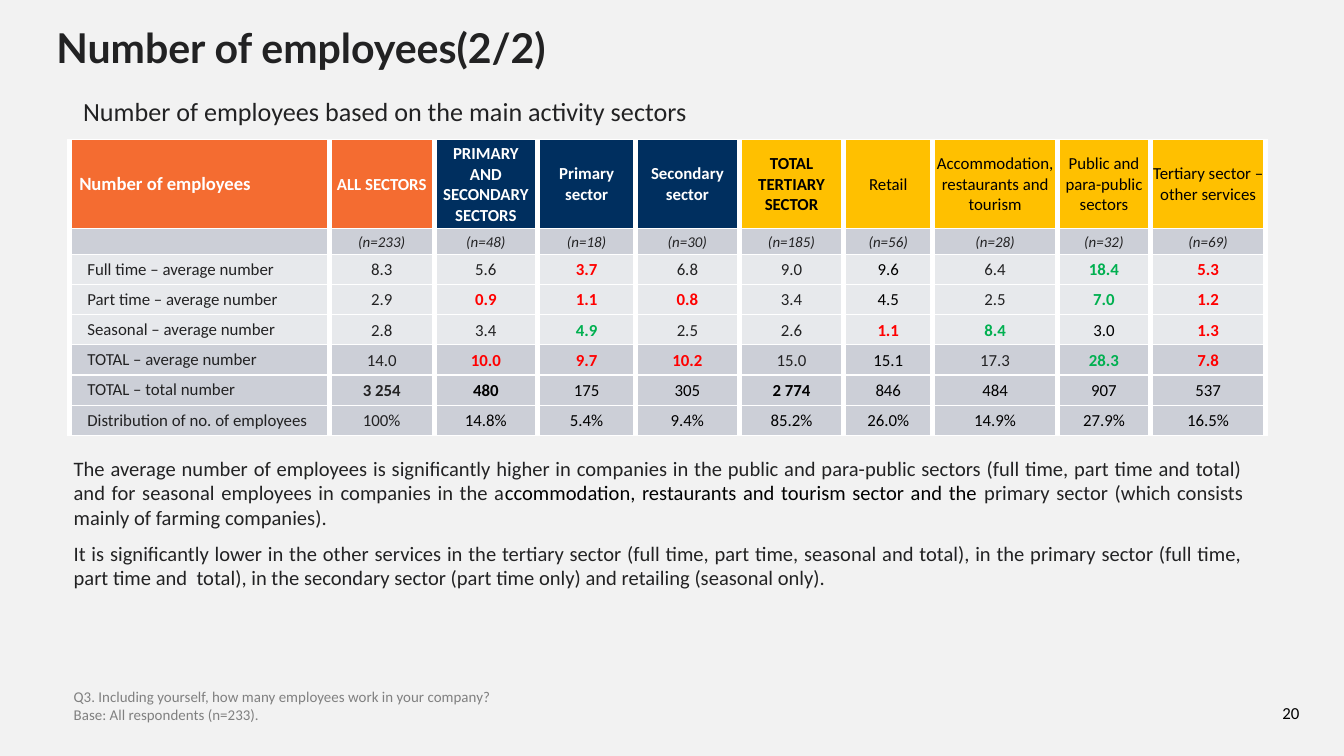
import pptx
import pptx.util
import pptx.dml.color
import pptx.enum.text
import pptx.oxml
import pptx.oxml.ns
import lxml.etree

In, Pt = pptx.util.Inches, pptx.util.Pt
Al = pptx.enum.text.PP_ALIGN
Mid = pptx.enum.text.MSO_ANCHOR
Fit = pptx.enum.text.MSO_AUTO_SIZE

theme = {
    "back": "F2F2F2", "ink": "222223", "black": "000000", "white": "FFFFFF",
    "gray": "808080", "low": "FF0000", "high": "00B050",
    "all": "F46C31", "navy": "002F5F", "gold": "FFC000",
    "dark": "CCCFD7", "light": "E7E9EC",
    "font": "Calibri", "head": "Lato",
    "title": 22, "sub": 14, "body": 11, "label": 10, "cell": 9, "note": 8,
}

title = "Number of employees(2/2)"
sub = "Number of employees based on the main activity sectors"
body = [
    [("The average number of employees is significantly higher in companies in the public and "
      "para-public sectors (full time, part time and total) and for seasonal employees in "
      "companies in the a", "ink"),
     ("ccommodation, restaurants and tourism sector and the ", "black"),
     ("primary sector (which consists mainly of farming companies).", "ink")],
    [("It is significantly lower in the other services in the tertiary sector (full time, part "
      "time, seasonal and total), in the primary sector (full time, part time and  total), in "
      "the secondary sector (part time only) and retailing (seasonal only).", "ink")],
]
notes = ["Q3. Including yourself, how many employees work in your company?",
         "Base: All respondents (n=233)."]
page = "20"

# Column: heading, fill, text colour, bold, width
cols = [
    ("Number of employees", "all", "white", True, 1.93),
    ("ALL SECTORS", "all", "white", True, 0.78),
    ("PRIMARY AND SECONDARY\nSECTORS", "navy", "white", True, 0.77),
    ("Primary sector", "navy", "white", True, 0.73),
    ("Secondary sector", "navy", "white", True, 0.77),
    ("TOTAL TERTIARY SECTOR", "gold", "black", True, 0.78),
    ("Retail", "gold", "black", False, 0.66),
    ("Accommodation, restaurants and tourism", "gold", "black", False, 0.93),
    ("Public and para-public sectors", "gold", "black", False, 0.69),
    ("Tertiary sector – other services", "gold", "black", False, 0.86),
]
bases = [233, 48, 18, 30, 185, 56, 28, 32, 69]
rows = [
    ("Full time – average number", "light", "8.3 5.6 -3.7 6.8 9.0 9.6 6.4 +18.4 -5.3"),
    ("Part time – average number", "light", "2.9 -0.9 -1.1 -0.8 3.4 4.5 2.5 +7.0 -1.2"),
    ("Seasonal – average number", "light", "2.8 3.4 +4.9 2.5 2.6 -1.1 +8.4 3.0 -1.3"),
    ("TOTAL – average number", "dark", "14.0 -10.0 -9.7 -10.2 15.0 15.1 17.3 +28.3 -7.8"),
    ("TOTAL – total number", "dark", "*3_254 *480 175 305 *2_774 846 484 907 537"),
    ("Distribution of no. of employees", "dark",
     "100% 14.8% 5.4% 9.4% 85.2% 26.0% 14.9% 27.9% 16.5%"),
]
marks = {"-": "low", "+": "high"}
sums = 4
plain = (6, 8)


def rgb(name):
    return pptx.dml.color.RGBColor.from_string(theme[name])


def style(par, size, tint="ink", bold=False, slant=False, face="font", side=Al.LEFT):
    par.alignment = side
    font = par.font
    font.name, font.size = theme[face], Pt(theme[size])
    font.bold, font.italic = bold, slant
    font.color.rgb = rgb(tint)


def pad(item, left, top, right, low):
    item.margin_left, item.margin_top = In(left), In(top)
    item.margin_right, item.margin_bottom = In(right), In(low)


def box(at, ins=(0.1, 0, 0.1, 0)):
    frame = slide.shapes.add_textbox(*map(In, at)).text_frame
    frame.word_wrap = True
    pad(frame, *ins)
    return frame


def edge(cell):
    prop = cell._tc.get_or_add_tcPr()
    for spot, (side, wide) in enumerate([("L", 3), ("R", 3), ("T", 0.75), ("B", 0.75)]):
        line = pptx.oxml.parse_xml(
            f'<a:ln{side} {pptx.oxml.ns.nsdecls("a")} w="{Pt(wide)}"><a:solidFill>'
            f'<a:srgbClr val="{theme["white"]}"/></a:solidFill></a:ln{side}>')
        prop.insert(spot, line)


def put(r, c, text, fill, ins, **look):
    cell = table.cell(r, c)
    cell.text = text
    cell.vertical_anchor = Mid.MIDDLE
    pad(cell, *ins)
    cell.fill.solid()
    cell.fill.fore_color.rgb = rgb(fill)
    edge(cell)
    for par in cell.text_frame.paragraphs:
        style(par, side=Al.CENTER if c else Al.LEFT, **look)
        if not text:
            end = lxml.etree.SubElement(par._p, pptx.oxml.ns.qn("a:endParaRPr"))
            end.set("sz", str(theme["note"] * 100))


deck = pptx.Presentation()
deck.slide_width, deck.slide_height = In(10), In(10 * 9 / 16)
slide = deck.slides.add_slide(deck.slide_layouts[5])
slide.background.fill.solid()
slide.background.fill.fore_color.rgb = rgb("back")

head = slide.shapes.title
head.left, head.top, head.width, head.height = map(In, (0.35, 0.19, 9.38, 0.36))
frame = head.text_frame
frame.text = title
frame.auto_size, frame.word_wrap = Fit.NONE, True
frame.vertical_anchor = Mid.MIDDLE
pad(frame, 0.07, 0.04, 0.07, 0.04)
frame.paragraphs[0].line_spacing = 0.9
style(frame.paragraphs[0], "title", bold=True, face="head")

frame = box((0.52, 0.71, 8.9, 0.24))
frame.text = sub
style(frame.paragraphs[0], "sub", side=Al.JUSTIFY)

high = [0.66, 0.19] + [1.35 / len(rows)] * len(rows)
table = slide.shapes.add_table(len(high), len(cols), In(0.52), In(1.04),
                               In(8.9), In(sum(high))).table
table.first_row = table.horz_banding = False
for row, size in zip(table.rows, high):
    row.height = In(size)

thin, name = (0.01, 0.01, 0.01, 0), (0.13, 0, 0.07, 0)
for c, (text, fill, tint, bold, wide) in enumerate(cols):
    table.columns[c].width = In(wide)
    put(0, c, text, fill, (0.02, 0.03, 0.02, 0.03) if c else (0.07, 0, 0.07, 0),
        size="cell" if c else "label", tint=tint, bold=bold)
    put(1, c, f"(n={bases[c - 1]})" if c else "", "dark", thin, size="note", slant=True)

for r, (label, fill, data) in enumerate(rows):
    put(r + 2, 0, label, fill, name, size="cell")
    for c, text in enumerate(data.split(), 1):
        dark = c in plain or (r >= sums and c > 1)
        tint = marks.get(text[0], "black" if dark else "ink")
        put(r + 2, c, text.lstrip("-+*").replace("_", " "), fill, thin,
            size="cell", tint=tint, bold=text[0] in "-+*")

frame = box((0.45, 3.39, 8.9, 1.01))
for n, parts in enumerate(body):
    par = frame.add_paragraph() if n else frame.paragraphs[0]
    par.space_after = Pt(0 if n == len(body) - 1 else 6)
    style(par, "body", side=Al.JUSTIFY)
    for text, tint in parts:
        run = par.add_run()
        run.text = text
        run.font.color.rgb = rgb(tint)

frame = box((0.45, 5.07, 5.99, 0.37), (0.1, 0.05, 0.1, 0.05))
frame.text = "\n".join(notes)
for par in frame.paragraphs:
    style(par, "note", "gray")

frame = box((9.35, 5.13, 0.51, 0.3), (0.1, 0.05, 0.1, 0.05))
frame.text = page
frame.vertical_anchor = Mid.BOTTOM
style(frame.paragraphs[0], "cell", "black", side=Al.CENTER)

deck.save("out.pptx")
